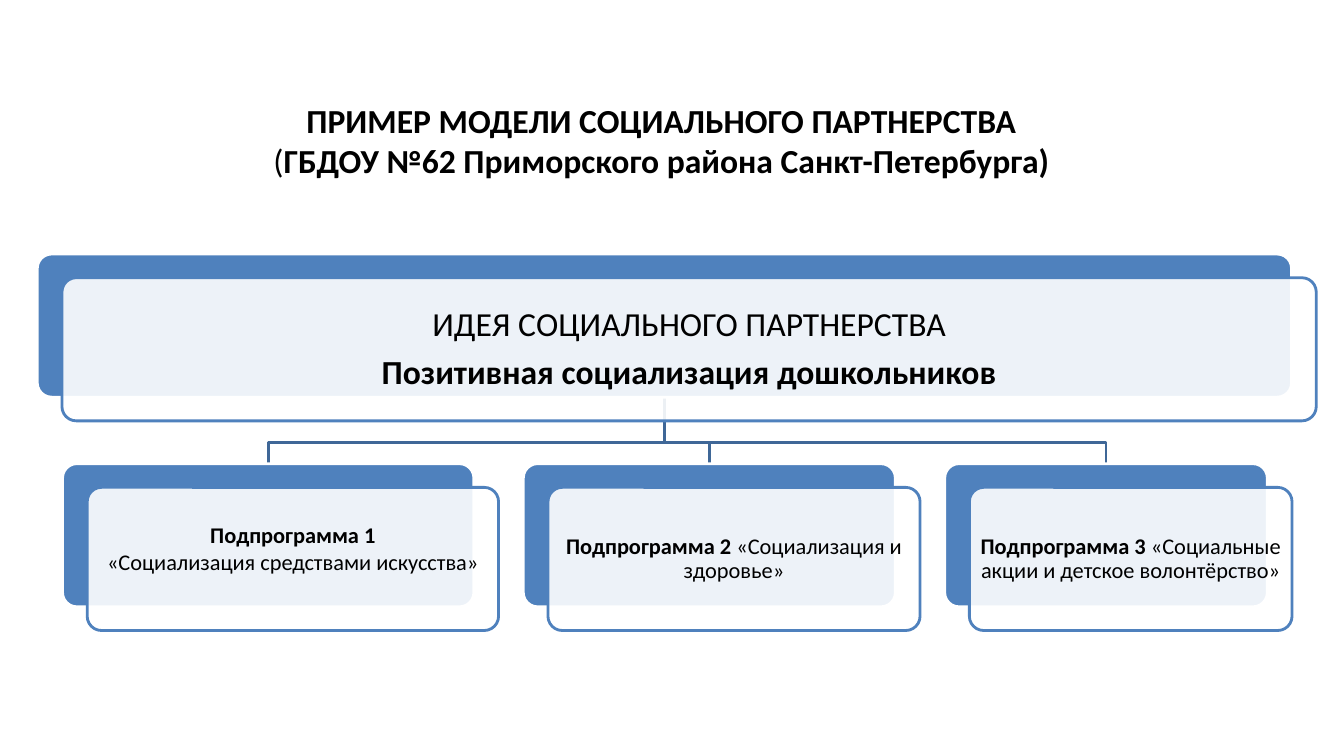
from lxml import etree
from pptx import Presentation
from pptx.dml.color import RGBColor
from pptx.enum.shapes import MSO_SHAPE as Shape
from pptx.enum.text import MSO_ANCHOR as Anchor, PP_ALIGN as Align
from pptx.oxml.ns import qn
from pptx.util import Inches, Pt

WIDTH, HEIGHT = 13.33, 7.5
FONT = "Calibri"
COLORS = {"text": "000000", "accent": "4F81BD", "branch": "3F6797", "paper": "FFFFFF"}
SHIFT_X, SHIFT_Y = 0.245, 0.235  # offset of a card's front panel
GAP = 2 * SHIFT_X
CARD_HEIGHT = 1.42
IDEA_BOX = (0.37, 2.52, 12.44, CARD_HEIGHT)
PROGRAM_LEFT, PROGRAM_TOP = 0.62, 4.6
BEND = 0.45  # drop from the idea card to the horizontal branch

IDEA = [[("ИДЕЯ СОЦИАЛЬНОГО ПАРТНЕРСТВА", False)],
        [("Позитивная социализация дошкольников", True)]]
PROGRAMS = [
    (4.08, [[("Подпрограмма 1", True)],
            [("«Социализация средствами искусства»", False)]],
     dict(spacing=1, after=0, bottom=0.25)),
    (3.69, [[("Подпрограмма 2 ", True), ("«Социализация и здоровье»", False)]], {}),
    (3.2, [[("Подпрограмма 3 ", True),
            ("«Социальные акции и детское волонтёрство»", False)]], {}),
]


def color(name):
    return RGBColor.from_string(COLORS[name])


def write(shape, paragraphs, size=16, spacing=0.9, after=0.35, inset=0.03,
          bottom=None, anchor=Anchor.MIDDLE):
    """Fill a shape with paragraphs of (text, bold) runs; after is a share of size."""
    frame = shape.text_frame
    frame.word_wrap = True
    frame.vertical_anchor = anchor
    frame.margin_left = frame.margin_right = frame.margin_top = Inches(inset)
    frame.margin_bottom = Inches(inset if bottom is None else bottom)
    for index, runs in enumerate(paragraphs):
        paragraph = frame.add_paragraph() if index else frame.paragraphs[0]
        paragraph.alignment = Align.CENTER
        paragraph.line_spacing = spacing
        paragraph.space_after = Pt(size * after)
        for text, bold in runs:
            if text == "\n":
                paragraph.add_line_break()
                continue
            run = paragraph.add_run()
            run.text = text
            run.font.name, run.font.size, run.font.bold = FONT, Pt(size), bold
            run.font.color.rgb = color("text")


def add_title(slide, box):
    shape = slide.shapes.add_textbox(*map(Inches, box))
    runs = [("ПРИМЕР МОДЕЛИ СОЦИАЛЬНОГО ПАРТНЕРСТВА", True), ("\n", True), ("(", False),
            ("ГБДОУ №62 Приморского района Санкт-Петербурга)", True)]
    write(shape, [runs], size=24, spacing=1, after=0, inset=0, anchor=Anchor.TOP)


def add_panel(slide, box, fill, line):
    panel = slide.shapes.add_shape(Shape.ROUNDED_RECTANGLE, *map(Inches, box))
    panel.adjustments[0] = 0.1
    panel.shadow.inherit = False
    panel.fill.solid()
    panel.fill.fore_color.rgb = color(fill)
    panel.line.color.rgb = color(line)
    panel.line.width = Pt(2)
    return panel


def add_card(slide, box, paragraphs, **text_format):
    """Draw a solid panel with a translucent text panel shifted over it."""
    left, top, width, height = box
    add_panel(slide, box, "accent", "paper")
    front = add_panel(slide, (left + SHIFT_X, top + SHIFT_Y, width, height), "paper", "accent")
    fill_color = front.fill._xPr.find(qn("a:solidFill"))[0]
    etree.SubElement(fill_color, qn("a:alpha")).set("val", "90000")
    write(front, paragraphs, **text_format)


def add_branch(slide, start, end):
    (start_x, start_y), (end_x, end_y) = start, end
    bend_y = start_y + BEND
    builder = slide.shapes.build_freeform(Inches(start_x), Inches(start_y))
    points = [(start_x, bend_y), (end_x, bend_y), (end_x, end_y)]
    builder.add_line_segments([(Inches(x), Inches(y)) for x, y in points], close=False)
    branch = builder.convert_to_shape()
    branch.shadow.inherit = False
    branch.fill.background()
    branch.line.color.rgb = color("branch")
    branch.line.width = Pt(2)


def add_hierarchy(slide, idea_box, program_left, program_top):
    left, top, width, height = idea_box
    program_boxes = []
    for program_width, _, _ in PROGRAMS:
        program_boxes.append((program_left, program_top, program_width, height))
        program_left += program_width + GAP
    for box in reversed(program_boxes):
        add_branch(slide, (left + width / 2, top + height), (box[0] + box[2] / 2, program_top))
    add_card(slide, idea_box, IDEA, size=24, inset=0.1)
    for box, (_, paragraphs, text_format) in zip(program_boxes, PROGRAMS):
        add_card(slide, box, paragraphs, **text_format)


def main():
    presentation = Presentation()
    presentation.slide_width, presentation.slide_height = Inches(WIDTH), Inches(HEIGHT)
    slide = presentation.slides.add_slide(presentation.slide_layouts[6])
    add_title(slide, (0.26, 0.99, 12.6, 0.81))
    add_hierarchy(slide, IDEA_BOX, PROGRAM_LEFT, PROGRAM_TOP)
    presentation.save("out.pptx")


if __name__ == "__main__":
    main()
